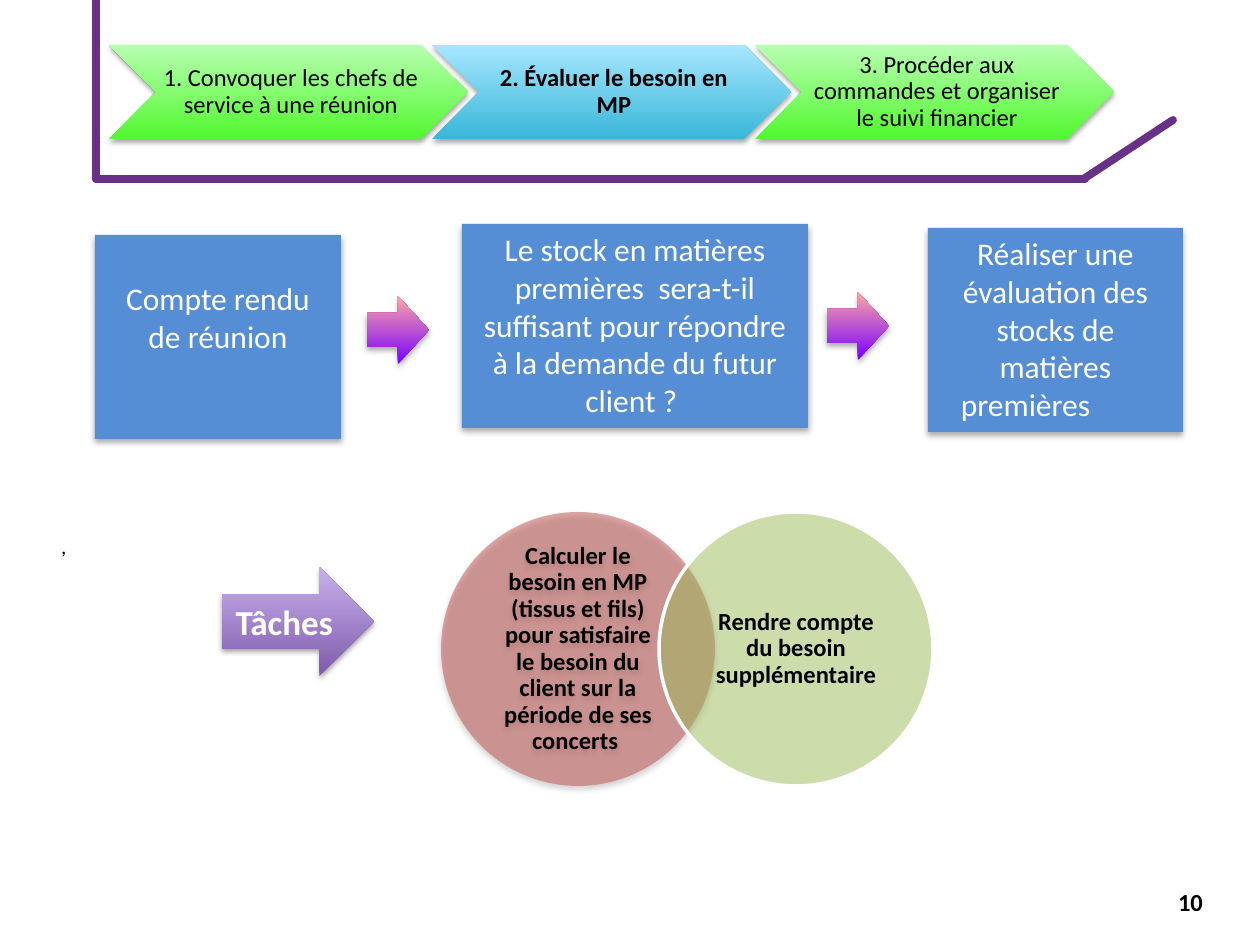
import pptx
import pptx.util
import pptx.dml.color
import pptx.enum.shapes
import pptx.enum.text
import pptx.oxml

RGB = pptx.dml.color.RGBColor
SHAPE = pptx.enum.shapes.MSO_SHAPE
ANCHOR = pptx.enum.text.MSO_ANCHOR
ALIGN = pptx.enum.text.PP_ALIGN
NS = 'xmlns:a="http://schemas.openxmlformats.org/drawingml/2006/main"'

BLACK = RGB(0x00, 0x00, 0x00)
WHITE = RGB(0xFF, 0xFF, 0xFF)
PURPLE = RGB(0x68, 0x30, 0x86)
BLUE = RGB(0x55, 0x8E, 0xD5)
RED = RGB(0xC0, 0x50, 0x4D)
OLIVE = RGB(0x9B, 0xBB, 0x59)
GREENS = (RGB(0x51, 0xF8, 0x2F), RGB(0xB9, 0xFF, 0xB2))
CYANS = (RGB(0x39, 0xB7, 0xD8), RGB(0xA7, 0xE6, 0xFF))
LILACS = (RGB(0x7F, 0x5B, 0xAB), RGB(0xC8, 0xB0, 0xED))
PINKS = (RGB(0x78, 0x00, 0xFF), RGB(0xFF, 0xA6, 0xA5))

FRAME = [(96, 0, 96, 179), (96, 179, 1085, 179), (1085, 178, 1173, 120)]
STEPS = [
    ("1. Convoquer les chefs de service à une réunion", GREENS, False),
    ("2. Évaluer le besoin en MP", CYANS, True),
    ("3. Procéder aux commandes et organiser le suivi financier", GREENS, False),
]
BOXES = [
    ("Compte rendu de réunion", 95, 235, 246, 44),
    ("Le stock en matières premières  sera-t-il suffisant pour répondre "
     "à la demande du futur client ? ", 462, 224, 346, 6),
    ("Réaliser une évaluation des stocks de matières premières \t",
     928, 228, 255, 6),
]
LINKS = [(367, 296), (827, 292)]
TASKS = [
    ("Calculer le besoin en MP (tissus et fils) pour satisfaire le besoin "
     "du client sur la période de ses concerts ", RED),
    ("Rendre compte du besoin supplémentaire", OLIVE),
]
NOTES = [
    (",", 48, 491, 1116, 97, 66, 12, False),
    ("10", 1165, 881, 85, 50, 6, 14, True),
]


def px(num):
    return pptx.util.Emu(round(num * 914400 / 126))


def write(shape, text, size, color, bold=False, align=ALIGN.CENTER,
          anchor=ANCHOR.TOP, pads=(13, 6, 13, 6), lead=None):
    frame = shape.text_frame
    frame.word_wrap = True
    frame.vertical_anchor = anchor
    (frame.margin_left, frame.margin_top,
     frame.margin_right, frame.margin_bottom) = map(px, pads)
    frame.text = text
    para = frame.paragraphs[0]
    para.alignment = align
    if lead:
        para.line_spacing = lead
    font = para.font
    font.name, font.size, font.bold = "Calibri", pptx.util.Pt(size), bold
    font.color.rgb = color


def draw(slide, kind, left, top, width, height, paint):
    shape = slide.shapes.add_shape(kind, *map(px, (left, top, width, height)))
    shape.shadow.inherit = False
    shape.line.fill.background()
    if isinstance(paint, tuple) and not isinstance(paint, RGB):
        shape.fill.gradient()
        shape.fill.gradient_angle = 90
        for stop, color in zip(shape.fill.gradient_stops, paint):
            stop.color.rgb = color
    else:
        shape.fill.solid()
        shape.fill.fore_color.rgb = paint
    return shape


def shade(shape, alpha=32, blur=3.5, dist=2.2):
    shape._element.spPr.find(pptx.oxml.ns.qn("a:effectLst")).append(
        pptx.oxml.parse_xml(
            f'<a:outerShdw {NS} blurRad="{round(blur * 12700)}" '
            f'dist="{round(dist * 12700)}" dir="5400000" rotWithShape="0">'
            f'<a:srgbClr val="000000"><a:alpha val="{alpha * 1000}"/>'
            '</a:srgbClr></a:outerShdw>'))


def main():
    deck = pptx.Presentation()
    deck.slide_width, deck.slide_height = px(1260), px(945)
    slide = deck.slides.add_slide(deck.slide_layouts[6])

    for ends in FRAME:
        line = slide.shapes.add_connector(
            pptx.enum.shapes.MSO_CONNECTOR.STRAIGHT, *map(px, ends))
        line.line.color.rgb = PURPLE
        line.line.width = pptx.util.Pt(4.5)
        line.line._get_or_add_ln().set("cap", "rnd")
        line._element.spPr.append(pptx.oxml.parse_xml(f"<a:effectLst {NS}/>"))

    for text, left, top, width, height, pad, size, bold in NOTES:
        note = slide.shapes.add_textbox(*map(px, (left, top, width, height)))
        write(note, text, size, BLACK, bold, ALIGN.LEFT, pads=(13, pad, 13, 6))

    for i, (text, color) in enumerate(TASKS):
        disc = draw(slide, SHAPE.OVAL, 441 + 218 * i, 512, 274, 274, color)
        tint = disc._element.spPr.find(".//" + pptx.oxml.ns.qn("a:srgbClr"))
        tint.append(pptx.oxml.parse_xml(f'<a:alpha {NS} val="50000"/>'))
        if i:
            disc.line.color.rgb = WHITE
            disc.line.width = pptx.util.Pt(2)
        else:
            shade(disc)
        write(disc, text, 14, BLACK, True, anchor=ANCHOR.MIDDLE,
              pads=(15, 3, 15, 3), lead=0.9)

    for text, left, top, width, pad in BOXES:
        box = draw(slide, SHAPE.RECTANGLE, left, top, width, 204, BLUE)
        shade(box)
        write(box, text, 18, WHITE, pads=(13, pad, 13, 6))

    arrow = draw(slide, SHAPE.RIGHT_ARROW, 222, 567, 152, 109, LILACS)
    shade(arrow, 35, 3.1, 1.8)
    write(arrow, "Tâches", 20, WHITE, True)

    for left, top in LINKS:
        shade(draw(slide, SHAPE.RIGHT_ARROW, left, top, 62, 68, PINKS))

    for i, (text, paint, bold) in enumerate(STEPS):
        step = draw(slide, SHAPE.CHEVRON, 109 + 323 * i, 45, 359, 94, paint)
        shade(step, 35, 3.1, 1.8)
        write(step, text, 14, BLACK, bold, anchor=ANCHOR.MIDDLE,
              pads=(7, 2, 2, 2), lead=0.9)

    deck.save("out.pptx")


if __name__ == "__main__":
    main()
